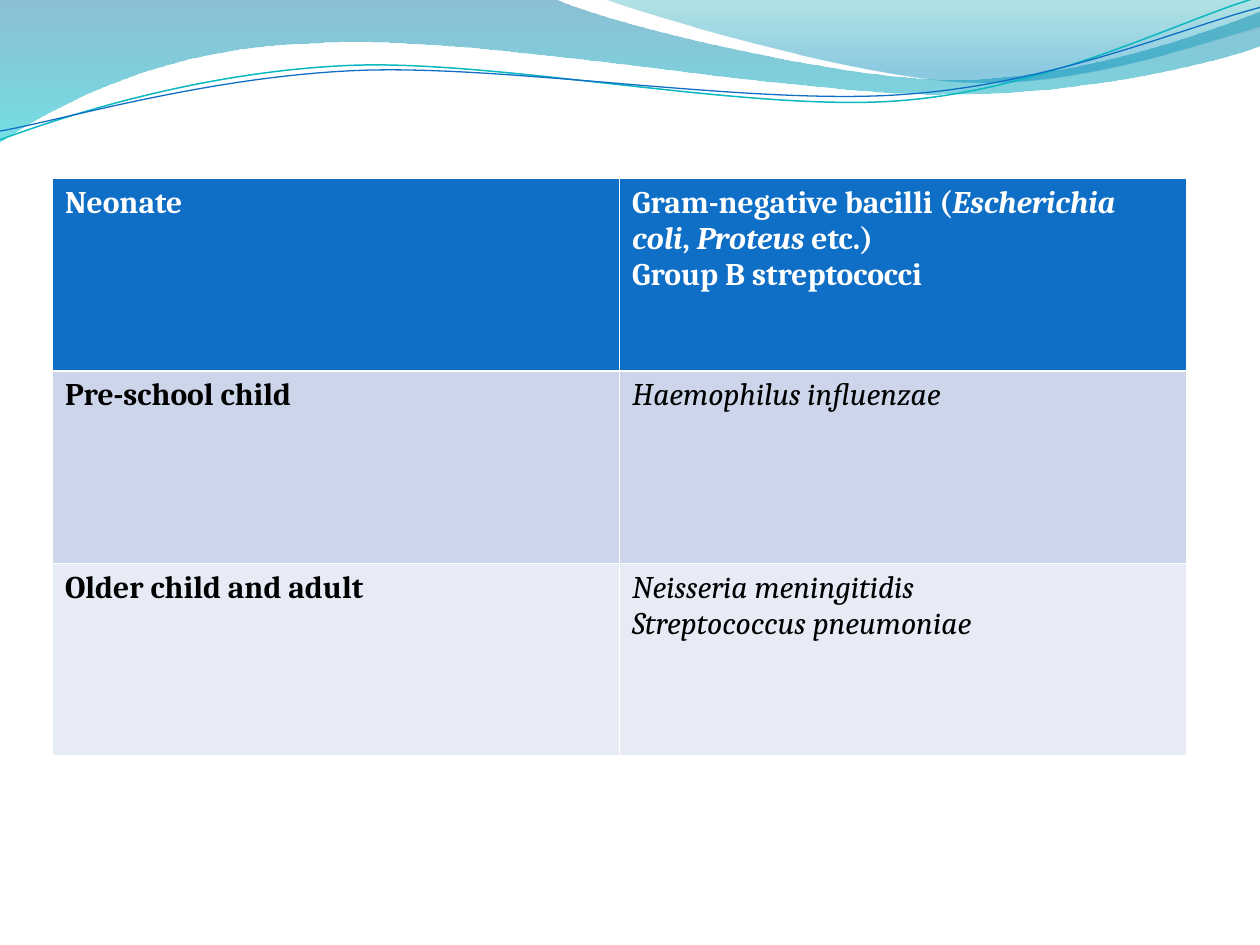
import math

from lxml import etree
from pptx import Presentation
from pptx import util as u
from pptx.dml import color as c
from pptx.oxml import ns

WHITE = c.RGBColor(0xFF, 0xFF, 0xFF)
BLACK = c.RGBColor(0x00, 0x00, 0x00)
BLUE = c.RGBColor(0x0F, 0x6F, 0xC6)
TEAL = c.RGBColor(0x0A, 0xB8, 0xBF)
BAND_DARK = c.RGBColor(0xCC, 0xD5, 0xEA)
BAND_LIGHT = c.RGBColor(0xE7, 0xEB, 0xF5)
WAVE_TOP = c.RGBColor(0x00, 0x74, 0xA1)
WAVE_BOTTOM = c.RGBColor(0x00, 0xC6, 0xCF)
CREST_TOP = c.RGBColor(0x00, 0xA1, 0xA9)
CREST_BOTTOM = c.RGBColor(0x00, 0x8B, 0xBF)

# Outlines in points: a start, then segments of one point (line) or three (curve)
WAVE = [[(0, 0)], [(316.8, -0.7)],
        [(342.7, 12.2), (478.1, 45.4), (545.8, 45.4)],
        [(614.2, 45.4), (689.8, 18.7), (720, 6.5)],
        [(720.7, 25.9)],
        [(707.8, 31.7), (626.4, 54.7), (537.1, 54)],
        [(447.8, 54), (275, 20.2), (185, 24.5)],
        [(92.9, 25.9), (33.1, 59.8), (-0.7, 81.4)]]
CREST = [[(344.9, -0.7)],
         [(366.5, 7.9), (491, 44.6), (553.7, 46.8)],
         [(616.3, 49.7), (691.9, 23), (720, 15.1)],
         [(720, 0)]]
TEAL_STRAND = [[(0, 79.9)],
               [(34.6, 67), (113.8, 41), (199.4, 37.4)],
               [(284.4, 33.8), (427, 64.1), (513.4, 57.6)],
               [(599.8, 51.1), (675.4, 10.8), (718.6, -1.4)]]
BLUE_STRAND = [[(0, 74.9)],
               [(33.8, 69.1), (118.1, 43.9), (203.8, 40.3)],
               [(290.2, 36.7), (429.8, 60.5), (516.2, 54)],
               [(601.9, 48.2), (677.5, 15.1), (720, 4.3)]]
STRAND_TILT = -2.7

# Each cell is a list of (text, bold, italic) runs; a line feed breaks the line
ROWS = [
    [[("Neonate", True, False)],
     [("Gram-negative bacilli (", True, False), ("Escherichia coli", True, True),
      (", ", True, False), ("Proteus", True, True),
      (" etc.)\nGroup B streptococci", True, False)]],
    [[("Pre-school child", True, False)],
     [("Haemophilus influenzae", False, True)]],
    [[("Older child and adult", True, False)],
     [("Neisseria meningitidis\nStreptococcus pneumoniae", False, True)]],
]
ROW_COLORS = [(BLUE, WHITE), (BAND_DARK, BLACK), (BAND_LIGHT, BLACK)]


def turn(outline, center, degrees):
    """Turn an outline clockwise about a centre."""
    cosine, sine = math.cos(math.radians(degrees)), math.sin(math.radians(degrees))
    center_x, center_y = center
    return [[(center_x + (x - center_x) * cosine - (y - center_y) * sine,
              center_y + (x - center_x) * sine + (y - center_y) * cosine)
             for x, y in segment] for segment in outline]


class SlideBuilder:
    font_name = "Cambria"
    font_size = u.Pt(18)

    def __init__(self, slide):
        self.slide = slide

    def outline(self, outline, close):
        points = [(u.Pt(x), u.Pt(y)) for segment in outline for x, y in segment]
        builder = self.slide.shapes.build_freeform(*points[0])
        builder.add_line_segments(points[1:], close=close)
        shape = builder.convert_to_shape()
        shape.shadow.inherit = False
        # Join each three points of a curved segment into one curve
        lines = iter(list(shape._element.iter(ns.qn("a:lnTo"))))
        for segment in outline[1:]:
            first, *others = [next(lines) for _ in segment]
            if others:
                curve = etree.Element(ns.qn("a:cubicBezTo"))
                first.addprevious(curve)
                for line in (first, *others):
                    curve.append(line[0])
                    line.getparent().remove(line)
        return shape

    def wave(self, outline, stops):
        shape = self.outline(outline, close=True)
        shape.line.fill.background()
        shape.fill.gradient()
        shape.fill.gradient_angle = 270
        for stop, (position, color, _) in zip(shape.fill.gradient_stops, stops):
            stop.position = position
            stop.color.rgb = color
        # Opacity of each gradient stop
        colors = shape._element.spPr.iter(ns.qn("a:srgbClr"))
        for element, (_, _, opacity) in zip(colors, stops):
            etree.SubElement(element, ns.qn("a:alpha"), val=str(opacity * 1000))

    def strand(self, outline, center, color, width):
        shape = self.outline(turn(outline, center, -STRAND_TILT), close=False)
        shape.rotation = STRAND_TILT
        shape.fill.background()
        shape.line.color.rgb = color
        shape.line.width = u.Pt(width)

    def table(self, left, top, column_width, row_height, rows, row_colors):
        columns = len(rows[0])
        table = self.slide.shapes.add_table(
            len(rows), columns, u.Pt(left), u.Pt(top),
            u.Pt(column_width * columns), u.Pt(row_height * len(rows))).table
        for row_index, (row, (fill, color)) in enumerate(zip(rows, row_colors)):
            for column_index, runs in enumerate(row):
                cell = table.cell(row_index, column_index)
                cell.fill.solid()
                cell.fill.fore_color.rgb = fill
                self.runs(cell.text_frame.paragraphs[0], runs, color)

    def runs(self, paragraph, runs, color):
        for content, bold, italic in runs:
            for index, line in enumerate(content.split("\n")):
                if index:
                    paragraph.add_line_break()
                run = paragraph.add_run()
                run.text = line
                run.font.name = self.font_name
                run.font.size = self.font_size
                run.font.bold = bold
                run.font.italic = italic
                run.font.color.rgb = color


def main():
    presentation = Presentation()
    presentation.slide_width = u.Pt(720)
    presentation.slide_height = u.Pt(540)
    builder = SlideBuilder(presentation.slides.add_slide(presentation.slide_layouts[6]))

    # Waves across the top
    builder.wave(WAVE, [(0, WAVE_TOP, 45), (1, WAVE_BOTTOM, 55)])
    builder.wave(CREST, [(0, CREST_TOP, 30), (0.8, CREST_BOTTOM, 45)])
    builder.strand(TEAL_STRAND, (359.4, 41.4), TEAL, 0.85)
    builder.strand(BLUE_STRAND, (359.6, 42.5), BLUE, 0.75)

    # Organisms by age group; the table style draws the white borders
    builder.table(30, 102, 324, 110, ROWS, ROW_COLORS)

    presentation.save("out.pptx")


if __name__ == "__main__":
    main()
